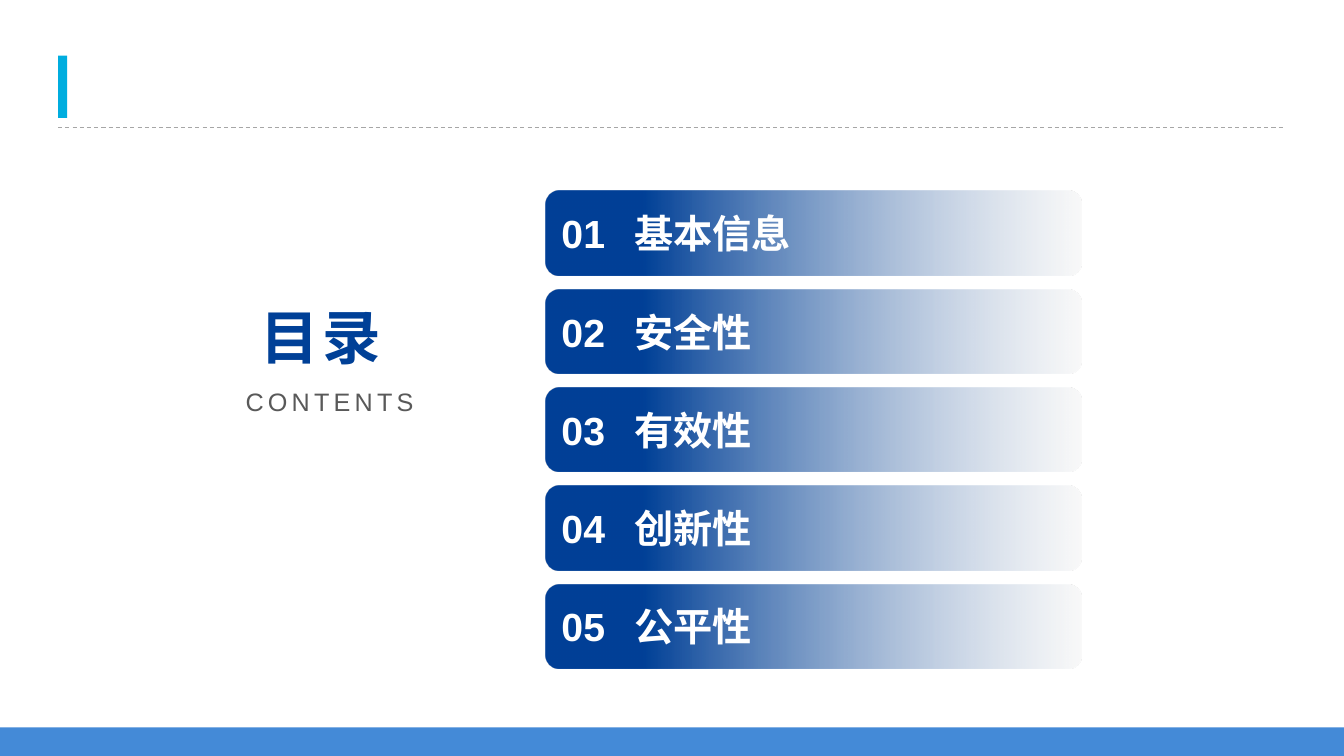
"""Build a contents slide with five numbered gradient bars."""
from dataclasses import dataclass

from lxml import etree
from pptx import Presentation
from pptx.dml.color import RGBColor
from pptx.enum import dml, shapes, text
from pptx.oxml import ns
from pptx.util import Pt


@dataclass(frozen=True)
class Theme:
    """Colours, font and type sizes of the slide."""
    navy: str = "004097"
    pale: str = "F4F4F4"
    blue: str = "448AD7"
    cyan: str = "00ADDF"
    rule: str = "A6A6A6"
    grey: str = "595959"
    white: str = "FFFFFF"
    font: str = "Arial"
    heading: float = 41.8
    label: float = 28
    caption: float = 18


THEME = Theme()
CHAPTERS = ["基本信息", "安全性", "有效性", "创新性", "公平性"]
BAR_LEFT, BAR_TOP, BAR_WIDTH, BAR_HEIGHT, BAR_STEP = 389.5, 136.5, 383, 60, 70.2
LABEL_TAB = 52


def apply(target, values):
    """Set each named attribute on the target."""
    for name, value in values.items():
        setattr(target, name, value)


def place(box, left, top, width, height):
    """Move and size a box, in points."""
    apply(box, {"left": Pt(left), "top": Pt(top),
                "width": Pt(width), "height": Pt(height)})


def write(box, words, size, colour, bold=False, align=text.PP_ALIGN.LEFT, spacing=0):
    """Write one formatted line in a box and return its paragraph."""
    para = box.text_frame.paragraphs[0]
    para.alignment = align
    span = para.add_run()
    span.text = words
    apply(span.font, {"name": THEME.font, "size": Pt(size), "bold": bold})
    span.font.color.rgb = RGBColor.from_string(colour)
    if spacing:
        span.font._element.set("spc", str(spacing * 100))
    return para


def set_frame(box, anchor, side=7.2, edge=3.6):
    """Set wrapping, anchoring and insets of a box."""
    apply(box.text_frame, {
        "word_wrap": True, "auto_size": text.MSO_AUTO_SIZE.NONE,
        "vertical_anchor": anchor, "margin_left": Pt(side), "margin_right": Pt(side),
        "margin_top": Pt(edge), "margin_bottom": Pt(edge)})


def add_block(page, kind, left, top, width, height):
    """Add a preset shape without line or shadow."""
    box = page.shapes.add_shape(kind, Pt(left), Pt(top), Pt(width), Pt(height))
    box.shadow.inherit = False
    box.line.fill.background()
    return box


def add_solid(page, colour, *frame):
    """Add a plain rectangle in one colour."""
    box = add_block(page, shapes.MSO_SHAPE.RECTANGLE, *frame)
    box.fill.solid()
    box.fill.fore_color.rgb = RGBColor.from_string(colour)


def add_rule(page, left, right, y):
    """Add the dashed rule under the header."""
    rule = page.shapes.add_connector(
        shapes.MSO_CONNECTOR.STRAIGHT, Pt(left), Pt(y), Pt(right), Pt(y))
    apply(rule.line, {"width": Pt(0.75), "dash_style": dml.MSO_LINE.DASH})
    rule.line.color.rgb = RGBColor.from_string(THEME.rule)
    etree.SubElement(rule._element.spPr, ns.qn("a:effectLst"))


def fade(box):
    """Fill a box from navy at left to half-clear pale at right."""
    box.fill.gradient()
    box.fill.gradient_angle = 180
    stops = box.fill.gradient_stops
    for stop, position, colour in zip(stops, (0, 0.82), (THEME.pale, THEME.navy)):
        stop.position = position
        stop.color.rgb = RGBColor.from_string(colour)
    pale = next(box._element.spPr.iter(ns.qn("a:srgbClr")))
    etree.SubElement(pale, ns.qn("a:alpha"), val="50000")


def add_chapter(page, index, name):
    """Add one numbered chapter bar."""
    box = add_block(page, shapes.MSO_SHAPE.ROUNDED_RECTANGLE,
                    BAR_LEFT, BAR_TOP + index * BAR_STEP, BAR_WIDTH, BAR_HEIGHT)
    fade(box)
    set_frame(box, text.MSO_ANCHOR.MIDDLE, 8.64, 4.32)
    para = write(box, f"{index + 1:02}\t{name}", THEME.label, THEME.white, True)
    tabs = etree.SubElement(para._p.get_or_add_pPr(), ns.qn("a:tabLst"))
    etree.SubElement(tabs, ns.qn("a:tab"), pos=str(Pt(LABEL_TAB)), algn="l")


def add_heading(page):
    """Fill the title and add its caption."""
    title = page.shapes.title
    caption = page.shapes.add_textbox(0, 0, 0, 0)
    place(title, 134, 211.7, 145.5, 60.5)
    place(caption, 157, 272.2, 145.5, 29)
    for box in (title, caption):
        set_frame(box, text.MSO_ANCHOR.TOP)
    right = text.PP_ALIGN.RIGHT
    write(title, "目录", THEME.heading, THEME.navy, True, right, 3)
    write(caption, "CONTENTS", THEME.caption, THEME.grey, False, right, 3)


def main():
    """Build and save the slide."""
    deck = Presentation()
    apply(deck, {"slide_width": Pt(960), "slide_height": Pt(540)})
    page = deck.slides.add_slide(deck.slide_layouts.get_by_name("Title Only"))
    add_solid(page, THEME.blue, 0, 519.5, 960, 20.5)
    add_rule(page, 41.5, 918, 91)
    add_solid(page, THEME.cyan, 41.5, 39.7, 6.5, 44.6)
    for index, name in enumerate(CHAPTERS):
        add_chapter(page, index, name)
    add_heading(page)
    deck.save("out.pptx")


if __name__ == "__main__":
    main()
